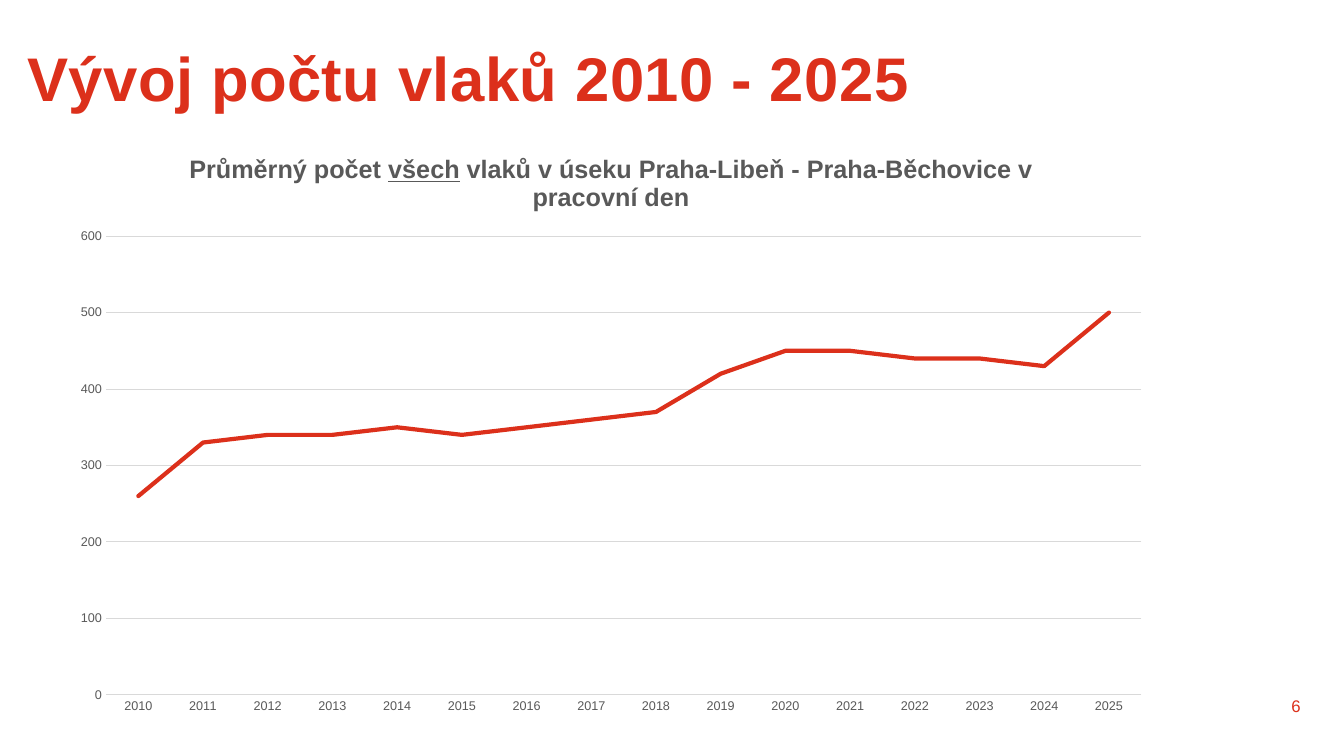
from dataclasses import dataclass

from lxml import etree
from pptx import Presentation
from pptx.chart.data import CategoryChartData
from pptx.dml.color import RGBColor
from pptx.enum.chart import XL_CHART_TYPE as ChartType
from pptx.enum.chart import XL_MARKER_STYLE as Marker
from pptx.enum.chart import XL_TICK_MARK as Tick
from pptx.enum.text import MSO_ANCHOR as Anchor
from pptx.enum.text import PP_ALIGN as Align
from pptx.oxml.ns import qn
from pptx.util import Inches, Pt


@dataclass(frozen=True)
class Theme:
    font: str = "Arial"
    red: RGBColor = RGBColor(0xDC, 0x30, 0x1B)
    grey: RGBColor = RGBColor(0x59, 0x59, 0x59)
    grid: RGBColor = RGBColor(0xD9, 0xD9, 0xD9)
    title_size: int = 44
    chart_title_size: int = 18
    number_size: int = 12
    axis_size: int = 9


THEME = Theme()
YEARS = [str(year) for year in range(2010, 2026)]
TRAINS = [260, 330, 340, 340, 350, 340, 350, 360,
          370, 420, 450, 450, 440, 440, 430, 500]
CHART_TITLE = [
    ("Průměrný počet ", False),
    ("všech", True),
    (" vlaků v úseku Praha-Libeň - Praha-Běchovice v pracovní den", False),
]


def style_font(font, size, color, bold=False):
    font.name = THEME.font
    font.size = Pt(size)
    font.bold = bold
    font.color.rgb = color


def add_span(para, text, size, color, bold=False):
    span = para.add_run()
    span.text = text
    style_font(span.font, size, color, bold)
    return span


def set_insets(frame, vertical):
    frame.margin_left = frame.margin_right = 0
    frame.margin_top = frame.margin_bottom = Inches(vertical)
    frame.word_wrap = True


def fill_title(page, text):
    title = page.shapes.title
    title.left, title.top = Inches(0.27), Inches(0.51)
    title.width, title.height = Inches(12.8), Inches(1.08)
    frame = title.text_frame
    set_insets(frame, 0)
    frame.vertical_anchor = Anchor.TOP
    para = frame.paragraphs[0]
    para.alignment = Align.LEFT
    para.line_spacing = 0.85
    span = add_span(para, text, THEME.title_size, THEME.red, bold=True)
    span.font._element.set("spc", "30")


def add_page_number(page, number):
    box = page.shapes.add_textbox(Inches(9.9), Inches(6.8), Inches(3), Inches(0.4))
    frame = box.text_frame
    set_insets(frame, 0.05)
    frame.vertical_anchor = Anchor.MIDDLE
    para = frame.paragraphs[0]
    para.alignment = Align.RIGHT
    add_span(para, number, THEME.number_size, THEME.red)


def style_line(line, color, width):
    line.color.rgb = color
    line.width = Pt(width)


def style_axis(axis):
    axis.major_tick_mark = axis.minor_tick_mark = Tick.NONE
    style_font(axis.tick_labels.font, THEME.axis_size, THEME.grey)


def place_plot(chart, **fractions):
    """Fix the inner plot area as fractions of the chart's size."""
    plot_area = chart._chartSpace.find(".//" + qn("c:plotArea"))
    for layout in plot_area.findall(qn("c:layout")):
        plot_area.remove(layout)
    layout = etree.Element(qn("c:layout"))
    plot_area.insert(0, layout)
    manual = etree.SubElement(layout, qn("c:manualLayout"))
    settings = {"layoutTarget": "inner", "xMode": "edge", "yMode": "edge", **fractions}
    for name, value in settings.items():
        etree.SubElement(manual, qn("c:" + name)).set("val", str(value))


def add_train_chart(page):
    data = CategoryChartData()
    data.categories = YEARS
    data.add_series("Series 1", TRAINS)
    chart = page.shapes.add_chart(ChartType.LINE, Inches(0.58), Inches(1.32),
                                  Inches(10.96), Inches(5.88), data).chart
    chart.has_legend = False
    chart.font.name = THEME.font
    chart.font.size = Pt(10)

    chart.has_title = True
    chart.chart_title.include_in_layout = False
    para = chart.chart_title.text_frame.paragraphs[0]
    for text, underlined in CHART_TITLE:
        span = add_span(para, text, THEME.chart_title_size, THEME.grey, bold=True)
        span.font.underline = underlined

    years, counts = chart.category_axis, chart.value_axis
    style_axis(years)
    style_line(years.format.line, THEME.grid, 0.75)
    style_axis(counts)
    counts.format.line.fill.background()
    counts.minimum_scale, counts.maximum_scale, counts.major_unit = 0, 600, 100
    counts.has_major_gridlines = True
    style_line(counts.major_gridlines.format.line, THEME.grid, 0.75)

    chart.plots[0].vary_by_categories = False
    series = chart.plots[0].series[0]
    series.smooth = False
    series.marker.style = Marker.NONE
    style_line(series.format.line, THEME.red, 3)
    chart._chartSpace.find(".//" + qn("c:ser")).find(".//" + qn("a:ln")).set("cap", "rnd")
    place_plot(chart, x=0.043, y=0.174, w=0.937, h=0.774)


def main():
    deck = Presentation()
    deck.slide_width, deck.slide_height = Inches(13.33), Inches(7.5)
    page = deck.slides.add_slide(deck.slide_layouts[5])
    fill_title(page, "Vývoj počtu vlaků 2010 - 2025")
    add_page_number(page, "6")
    add_train_chart(page)
    deck.save("out.pptx")


if __name__ == "__main__":
    main()
